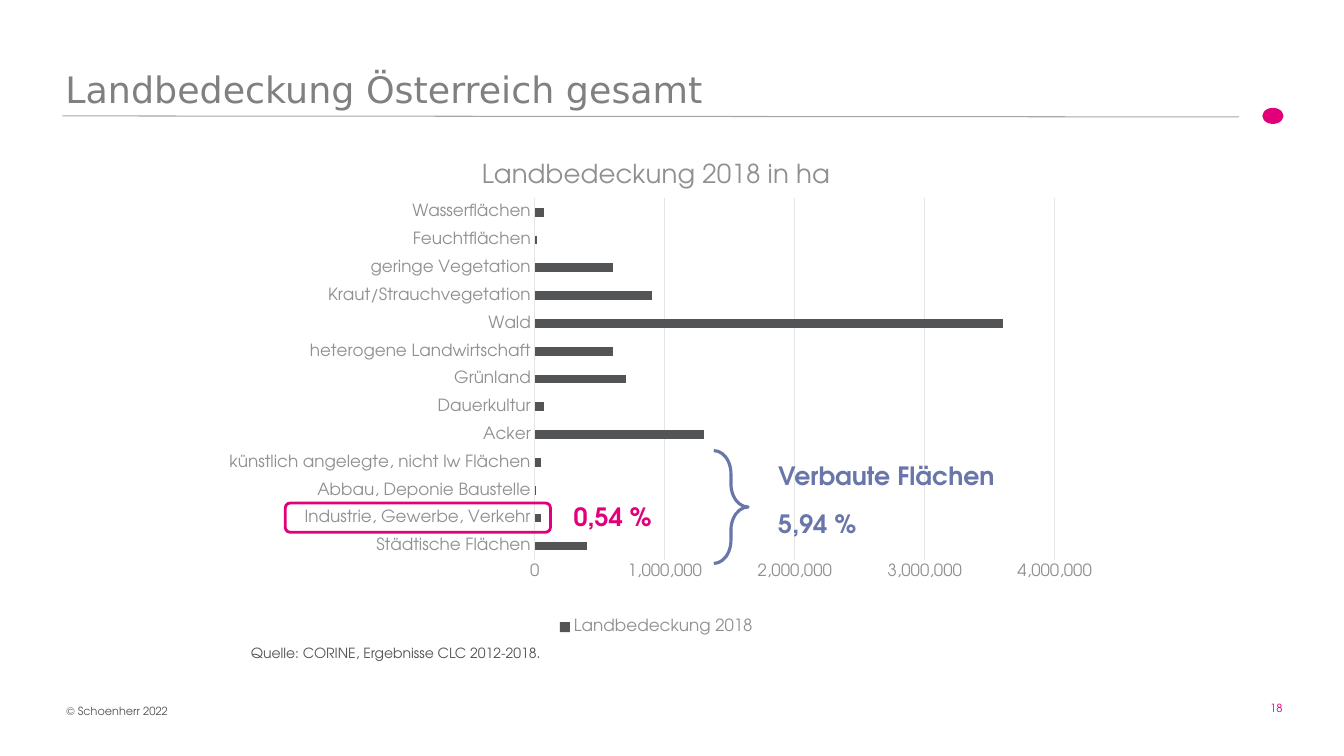
from lxml import etree
from pptx import Presentation
from pptx import util as u
from pptx.chart import data
from pptx.dml import color
from pptx.enum import chart as ch, shapes, text
from pptx.oxml import ns

HUES = {"pink": "E2007A", "dark": "535455", "grey": "8F9091", "head": "808080",
        "rule": "A6A6A6", "grid": "E5E5E6", "blue": "6976AA"}
FONT = "TeX Gyre Adventor"
AREAS = [
    ("Städtische Flächen", 400000),
    ("Industrie, Gewerbe, Verkehr", 50000),
    ("Abbau, Deponie Baustelle", 10000),
    ("künstlich angelegte, nicht lw Flächen", 50000),
    ("Acker", 1300000),
    ("Dauerkultur", 70000),
    ("Grünland", 700000),
    ("heterogene Landwirtschaft", 600000),
    ("Wald", 3600000),
    ("Kraut/Strauchvegetation", 900000),
    ("geringe Vegetation", 600000),
    ("Feuchtflächen", 20000),
    ("Wasserflächen", 70000),
]


def rgb(hue):
    return color.RGBColor.from_string(HUES[hue])


def inch(*nums):
    return [u.Inches(n) for n in nums]


def style(font, size, hue, bold=False, face=FONT):
    font.size, font.bold, font.name = u.Pt(size), bold, face
    font.color.rgb = rgb(hue)


def stroke(line, hue, width):
    line.color.rgb = rgb(hue)
    line.width = u.Pt(width)


def write(slide, box, words, size=18, hue="dark", bold=False, face=FONT,
          wrap=False, anchor=text.MSO_ANCHOR.TOP):
    frame = slide.shapes.add_textbox(*inch(*box)).text_frame
    frame.word_wrap = wrap
    frame.vertical_anchor = anchor
    run = frame.paragraphs[0].add_run()
    run.text = words
    style(run.font, size, hue, bold, face)


def draw(slide, kind, box, fill=None, line=None, width=1):
    shape = slide.shapes.add_shape(kind, *inch(*box))
    shape.shadow.inherit = False
    if fill:
        shape.fill.solid()
        shape.fill.fore_color.rgb = rgb(fill)
    else:
        shape.fill.background()
    if line:
        stroke(shape.line, line, width)
    else:
        shape.line.fill.background()
    return shape


def header(slide, box):
    x, y, w, h = box
    base = y + h
    rule = slide.shapes.add_connector(
        shapes.MSO_CONNECTOR.STRAIGHT, *inch(x + 0.07, base, x + 11.74, base + 0.01))
    stroke(rule.line, "rule", 0.75)
    etree.SubElement(rule._element.spPr, ns.qn("a:effectLst"))
    draw(slide, shapes.MSO_SHAPE.OVAL, (x + 11.97, base - 0.08, 0.21, 0.16), fill="pink")
    write(slide, box, "Landbedeckung Österreich gesamt", 26, "head",
          face="DejaVu Sans", wrap=True, anchor=text.MSO_ANCHOR.BOTTOM)


def place(chart, **spots):
    # Fixed inner plot area, as fractions of the chart
    plot = chart._chartSpace.chart.plotArea
    for old in plot.findall(ns.qn("c:layout")):
        plot.remove(old)
    layout = etree.Element(ns.qn("c:layout"))
    manual = etree.SubElement(layout, ns.qn("c:manualLayout"))
    marks = {"layoutTarget": "inner", "xMode": "edge", "yMode": "edge", **spots}
    for tag, val in marks.items():
        etree.SubElement(manual, ns.qn("c:" + tag)).set("val", str(val))
    plot.insert(0, layout)


def bars(slide, box):
    table = data.CategoryChartData(number_format="#,##0")
    table.categories = [name for name, _ in AREAS]
    table.add_series("Landbedeckung 2018", [area for _, area in AREAS])
    chart = slide.shapes.add_chart(
        ch.XL_CHART_TYPE.BAR_CLUSTERED, *inch(*box), table).chart
    style(chart.font, 10, "dark")
    place(chart, x=0.364, y=0.115, w=0.582, h=0.726)

    # Title and legend
    chart.has_title = True
    title = chart.chart_title
    title.include_in_layout = False
    run = title.text_frame.paragraphs[0].add_run()
    run.text = "Landbedeckung 2018 in ha"
    style(run.font, 18.6, "grey")
    chart.has_legend = True
    chart.legend.position = ch.XL_LEGEND_POSITION.BOTTOM
    chart.legend.include_in_layout = False
    style(chart.legend.font, 12, "grey")

    # Axes
    cats, vals = chart.category_axis, chart.value_axis
    for axis in (cats, vals):
        axis.major_tick_mark = axis.minor_tick_mark = ch.XL_TICK_MARK.NONE
        style(axis.tick_labels.font, 12, "grey")
    stroke(cats.format.line, "grid", 0.75)
    vals.format.line.fill.background()
    vals.minimum_scale, vals.maximum_scale, vals.major_unit = 0, 4000000, 1000000
    vals.has_major_gridlines = True
    stroke(vals.major_gridlines.format.line, "grid", 0.75)
    vals.tick_labels.number_format = "#,##0"
    vals.tick_labels.number_format_is_linked = False

    # Bars
    plot = chart.plots[0]
    plot.gap_width, plot.vary_by_categories = 219, False
    fill = plot.series[0].format.fill
    fill.solid()
    fill.fore_color.rgb = rgb("dark")


def notes(slide, box):
    x, y, w, h = box
    # Industry share
    write(slide, (x + 2.76, y + 0.45, 0.99, 0.4), "0,54 %", hue="pink", bold=True)
    draw(slide, shapes.MSO_SHAPE.ROUNDED_RECTANGLE, (x, y + 0.52, 2.63, 0.29),
         line="pink", width=2)
    # Built-up share
    brace = draw(slide, shapes.MSO_SHAPE.RIGHT_BRACE, (x + 4.25, y, 0.34, h),
                 line="blue", width=2.25)
    brace.adjustments[0], brace.adjustments[1] = 0.676, 0.5
    for row, words in enumerate(("Verbaute Flächen", "5,94 %")):
        write(slide, (x + 4.79, y + 0.05 + 0.47 * row, w - 4.79, 0.4), words,
              hue="blue", bold=True)


def footer(slide, box):
    x, y, w, h = box
    write(slide, (x, y + 0.03, 2.94, h), "© Schoenherr 2022", 8, wrap=True)
    write(slide, (x + w - 0.41, y, 0.41, h), "18", 8, "pink")


def main():
    deck = Presentation()
    deck.slide_width, deck.slide_height = inch(13.33, 7.5)
    slide = deck.slides.add_slide(deck.slide_layouts[6])
    footer(slide, (0.56, 6.91, 12.35, 0.24))
    header(slide, (0.55, 0.6, 11.81, 0.55))
    bars(slide, (2.08, 1.4, 8.86, 4.94))
    write(slide, (2.39, 6.34, 3.11, 0.27),
          "Quelle: CORINE, Ergebnisse CLC 2012-2018.", 10)
    notes(slide, (2.83, 4.47, 7.17, 1.12))
    deck.save("out.pptx")


if __name__ == "__main__":
    main()
